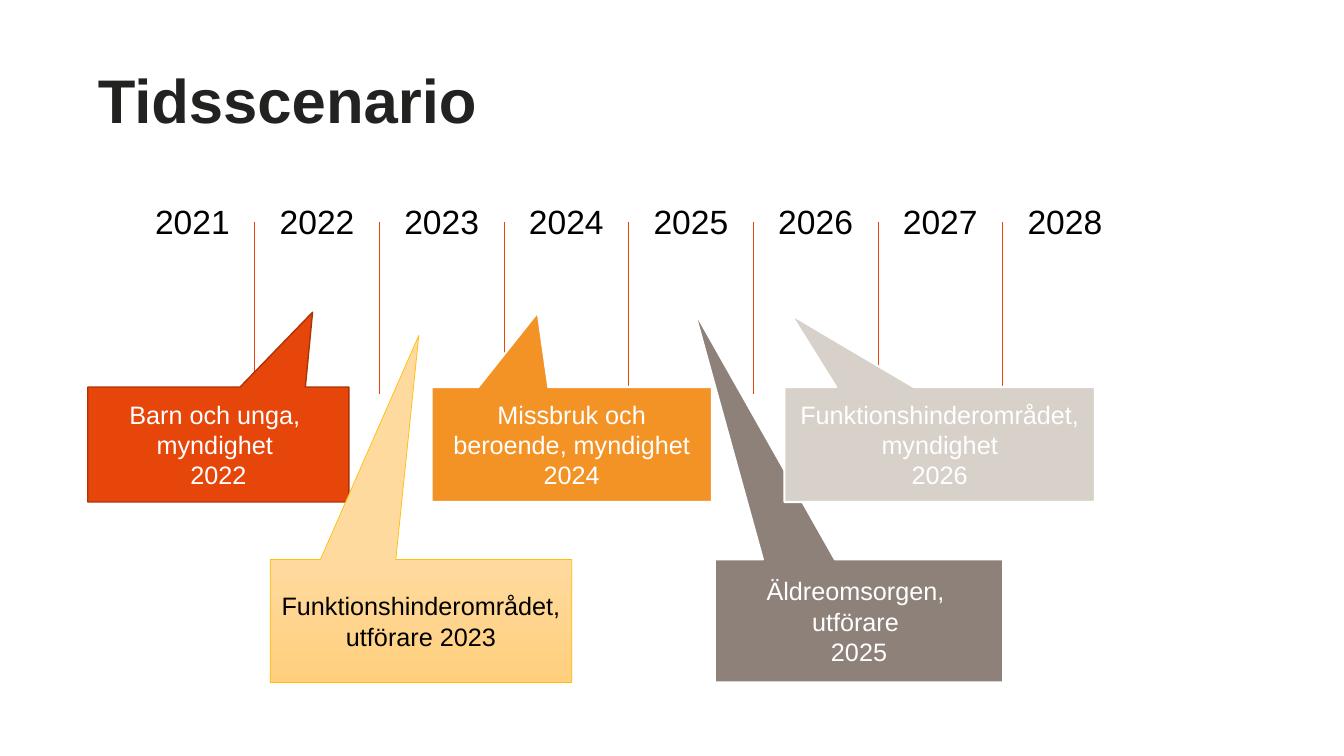
from lxml import etree
from pptx import Presentation
from pptx.dml.color import RGBColor
from pptx.enum.shapes import MSO_CONNECTOR, MSO_SHAPE
from pptx.enum.text import MSO_ANCHOR, PP_ALIGN
from pptx.oxml.ns import qn
from pptx.util import Inches, Pt

STRAIGHT = MSO_CONNECTOR.STRAIGHT
CALLOUT = MSO_SHAPE.RECTANGULAR_CALLOUT
TOP, MIDDLE = MSO_ANCHOR.TOP, MSO_ANCHOR.MIDDLE
LEFT, CENTER = PP_ALIGN.LEFT, PP_ALIGN.CENTER

FONT = "Arial"
BLACK = RGBColor(0x00, 0x00, 0x00)
WHITE = RGBColor(0xFF, 0xFF, 0xFF)
CHARCOAL = RGBColor(0x22, 0x22, 0x21)
RED = RGBColor(0xE6, 0x46, 0x0A)
DARK_RED = RGBColor(0xAA, 0x34, 0x07)
PEACH = RGBColor(0xFF, 0xDA, 0x9F)
DEEP_PEACH = RGBColor(0xFF, 0xCF, 0x7D)
YELLOW = RGBColor(0xFF, 0xBE, 0x0A)
ORANGE = RGBColor(0xF3, 0x93, 0x25)
BROWN = RGBColor(0x8D, 0x81, 0x79)
SAND = RGBColor(0xD7, 0xD1, 0xCA)

YEARS = range(2021, 2029)
UPPER_ROW, LOWER_ROW = (3.84, 1.14), (5.55, 1.22)
CALLOUTS = [
    ("Barn och unga, \nmyndighet \n2022", 0.87, 2.59, UPPER_ROW,
     (0.361, -1.151), [RED], DARK_RED, 1, WHITE),
    ("Funktionshinderområdet, utförare 2023", 2.68, 2.99, LOWER_ROW,
     (-0.007, -2.322), [PEACH, DEEP_PEACH], YELLOW, 0.5, BLACK),
    ("Missbruk och beroende, myndighet\n2024", 4.28, 2.78, UPPER_ROW,
     (-0.121, -1.151), [ORANGE], WHITE, 1.5, WHITE),
    ("Äldreomsorgen, \nutförare \n2025", 7.09, 2.86, LOWER_ROW,
     (-0.572, -2.524), [BROWN], WHITE, 1.5, WHITE),
    ("Funktionshinderområdet, myndighet\n2026", 7.78, 3.08, UPPER_ROW,
     (-0.479, -1.131), [SAND], WHITE, 1.5, WHITE),
]


def format_text(text_frame, size, color, alignment, bold=False):
    """Give every paragraph of a text frame the same look."""
    for paragraph in text_frame.paragraphs:
        paragraph.alignment = alignment
        paragraph.font.name = FONT
        paragraph.font.size = Pt(size)
        paragraph.font.bold = bold
        paragraph.font.color.rgb = color


def place_title(slide, text, left, top, width, height):
    """Put the slide title in the given box."""
    title = slide.shapes.title
    title.left, title.top = Inches(left), Inches(top)
    title.width, title.height = Inches(width), Inches(height)
    title.text_frame.text = text
    title.text_frame.vertical_anchor = TOP
    title.text_frame.paragraphs[0].line_spacing = 0.95
    format_text(title.text_frame, 44, CHARCOAL, LEFT, bold=True)


def add_year_table(slide, left, top, width, height):
    """Add one row of years over equal columns."""
    table = slide.shapes.add_table(
        1, len(YEARS), Inches(left), Inches(top), Inches(width), Inches(height)).table
    table.first_row = table.horz_banding = False
    for column, year in enumerate(YEARS):
        cell = table.cell(0, column)
        cell.fill.background()
        cell.text = str(year)
        format_text(cell.text_frame, 24, BLACK, CENTER)


def add_year_dividers(slide, left, top, width, height):
    """Draw a vertical line between each pair of year columns."""
    for column in range(1, len(YEARS)):
        x = Inches(left + column * width / len(YEARS))
        divider = slide.shapes.add_connector(
            STRAIGHT, x, Inches(top), x, Inches(top + height))
        divider.line.color.rgb = RED
        divider.line.width = Pt(0.5)
        etree.SubElement(divider.element.spPr, qn("a:effectLst"))


def add_callout(slide, text, left, width, row, tip, fills, border, border_width, text_color):
    """Add a callout in a row, its tip given as shares from its centre."""
    top, height = row
    callout = slide.shapes.add_shape(
        CALLOUT, Inches(left), Inches(top), Inches(width), Inches(height))
    callout.shadow.inherit = False
    for index, share in enumerate(tip):
        callout.adjustments[index] = share
    if len(fills) == 1:
        callout.fill.solid()
        callout.fill.fore_color.rgb = fills[0]
    else:
        callout.fill.gradient()
        callout.fill.gradient_angle = 270
        for stop, color in zip(callout.fill.gradient_stops, fills):
            stop.color.rgb = color
    callout.line.color.rgb = border
    callout.line.width = Pt(border_width)
    callout.text_frame.text = text
    callout.text_frame.word_wrap = True
    callout.text_frame.vertical_anchor = MIDDLE
    format_text(callout.text_frame, 18, text_color, CENTER)


def build_timeline_slide(presentation):
    """Build the slide with its title, years and callouts."""
    slide = presentation.slides.add_slide(presentation.slide_layouts[5])
    place_title(slide, "Tidsscenario", 0.87, 0.62, 10.51, 1.03)
    timeline_left, timeline_width = 1.29, 9.89
    add_year_table(slide, timeline_left, 1.97, timeline_width, 0.5)
    add_year_dividers(slide, timeline_left, 2.2, timeline_width, 1.71)
    for callout in CALLOUTS:
        add_callout(slide, *callout)


def main():
    """Create and save the presentation."""
    presentation = Presentation()
    presentation.slide_width = Inches(13.33)
    presentation.slide_height = Inches(7.5)
    build_timeline_slide(presentation)
    presentation.save("out.pptx")


if __name__ == "__main__":
    main()
